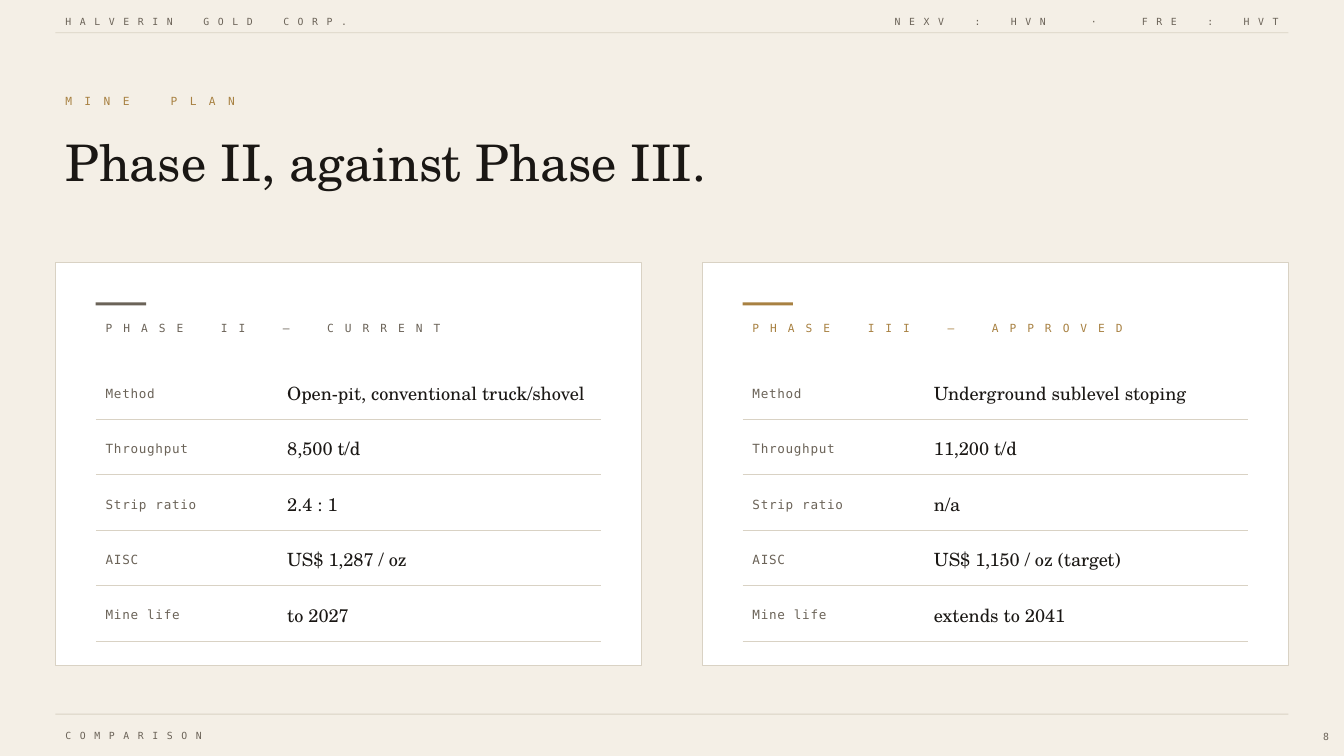
from pptx import Presentation, util as u
from pptx.dml.color import RGBColor
from pptx.enum import shapes, text
from pptx.oxml import parse_xml
from pptx.oxml.ns import nsdecls

# Palette and fonts
PAPER = RGBColor(0xF4, 0xEF, 0xE6)
WHITE = RGBColor(0xFF, 0xFF, 0xFF)
RULE = RGBColor(0xD9, 0xD2, 0xC4)
STONE = RGBColor(0x6B, 0x63, 0x58)
GOLD = RGBColor(0xA8, 0x81, 0x42)
INK = RGBColor(0x1A, 0x17, 0x14)
MONO, SERIF = "DejaVu Sans Mono", "TeX Gyre Schola"
ADVANCE = 0.6  # width of a mono letter, in ems

# Grid: one column or row is a tenth of an inch
CELL = 0.1
EDGE, FULL, GUTTER = 5.5, 122.3, 6
CARD = (FULL - GUTTER) / 2
PAD, TOP, PITCH = 4, 26, 5.5

LEFT, RIGHT = text.PP_ALIGN.LEFT, text.PP_ALIGN.RIGHT
MIDDLE = text.MSO_ANCHOR.MIDDLE


class Page:
    def __init__(self):
        self.deck = Presentation()
        self.deck.slide_width = u.Inches(13.33)
        self.deck.slide_height = u.Inches(7.5)
        self.slide = self.deck.slides.add_slide(self.deck.slide_layouts[5])
        self.slide.background.fill.solid()
        self.slide.background.fill.fore_color.rgb = PAPER

    def grid(self, *cells):
        return [u.Inches(n * CELL) for n in cells]

    def rect(self, x, y, w, h, fill, line=None):
        box = self.slide.shapes.add_shape(
            shapes.MSO_SHAPE.RECTANGLE, *self.grid(x, y, w, h))
        box.shadow.inherit = False
        box.fill.solid()
        box.fill.fore_color.rgb = fill
        if line is None:
            box.line.fill.background()
        else:
            box.line.color.rgb = line
            box.line.width = u.Pt(0.5)

    def line(self, x, y, w):
        rule = self.slide.shapes.add_connector(
            shapes.MSO_CONNECTOR.STRAIGHT, *self.grid(x, y, x + w, y))
        rule.line.color.rgb = RULE
        rule.line.width = u.Pt(0.4)
        rule._element.spPr.append(parse_xml(f"<a:effectLst {nsdecls('a')}/>"))

    def fill(self, box, runs, size, color, font=MONO, align=LEFT, anchor=MIDDLE):
        """Each run is a pair of words and letter spacing in points."""
        frame = box.text_frame
        frame.word_wrap = True
        frame.auto_size = text.MSO_AUTO_SIZE.NONE
        frame.vertical_anchor = anchor
        par = frame.paragraphs[0]
        par.alignment = align
        for words, track in runs:
            run = par.add_run()
            run.text = words
            run.font.size = u.Pt(size)
            run.font.name = font
            run.font.color.rgb = color
            if track:
                run._r.get_or_add_rPr().set("spc", str(round(track * 100)))

    def text(self, x, y, w, h, runs, size, color, **style):
        box = self.slide.shapes.add_textbox(*self.grid(x, y, w, h))
        self.fill(box, runs, size, color, **style)

    def title(self, x, y, w, h, words):
        box = self.slide.shapes.title
        box.left, box.top, box.width, box.height = self.grid(x, y, w, h)
        self.fill(box, [(words, 0)], 36, INK, font=SERIF)

    def spread(self, x, y, w, h, words, size, color, track, align=LEFT):
        """Set wide-spaced capitals, with one stretched space between words."""
        em = ADVANCE * size
        parts = words.split()
        runs = [(" ".join(parts[0]), track)]
        for last, word in zip(parts, parts[1:]):
            wide = 6 if "·" in (last, word) else 4
            runs.append((" ", wide * (em + track) - em))
            runs.append((" ".join(word), track))
        self.text(x, y, w, h, runs, size, color, align=align)

    def card(self, x, head, color, facts):
        self.rect(x, TOP, CARD, 40, WHITE, RULE)
        x, wide = x + PAD, CARD - 2 * PAD
        self.rect(x, TOP + 4, 5, 0.3, color)
        self.spread(x, TOP + 5, wide, 3, head, 8, color, 1.5)
        for row, (label, value) in enumerate(zip(LABELS, facts)):
            y = TOP + 10.5 + row * PITCH
            self.text(x, y, 17, 5, [(label, 0.5)], 9, STONE)
            self.text(x + 18, y, 34.2, 5, [(value, 0)], 13, INK, font=SERIF)
            self.line(x, y + 5.1, wide)


LABELS = ["Method", "Throughput", "Strip ratio", "AISC", "Mine life"]
CARDS = [
    ("PHASE II — CURRENT", STONE,
     ["Open-pit, conventional truck/shovel", "8,500 t/d", "2.4 : 1",
      "US$ 1,287 / oz", "to 2027"]),
    ("PHASE III — APPROVED", GOLD,
     ["Underground sublevel stoping", "11,200 t/d", "n/a",
      "US$ 1,150 / oz (target)", "extends to 2041"]),
]


def main():
    page = Page()

    # Header and footer
    for y in (3.2, 70.8):
        page.rect(EDGE, y, FULL, 0.1, RULE)
    page.spread(EDGE, 1, 60, 2.2, "HALVERIN GOLD CORP.", 7, STONE, 1)
    page.spread(EDGE + FULL - 60, 1, 60, 2.2, "NEXV : HVN · FRE : HVT",
                7, STONE, 1, RIGHT)
    page.spread(EDGE, 72, 60, 2, "COMPARISON", 7, STONE, 1)
    page.text(EDGE + FULL, 72, 5, 2, [("8", 0)], 7, STONE,
              align=RIGHT, anchor=text.MSO_ANCHOR.TOP)

    # Heading
    page.spread(EDGE, 8.5, 40, 3, "MINE PLAN", 8, GOLD, 2)
    page.title(EDGE, 11.5, 120, 9, "Phase II, against Phase III.")

    # Phase cards
    for col, (head, color, facts) in enumerate(CARDS):
        page.card(EDGE + col * (CARD + GUTTER), head, color, facts)

    page.deck.save("out.pptx")


if __name__ == "__main__":
    main()
